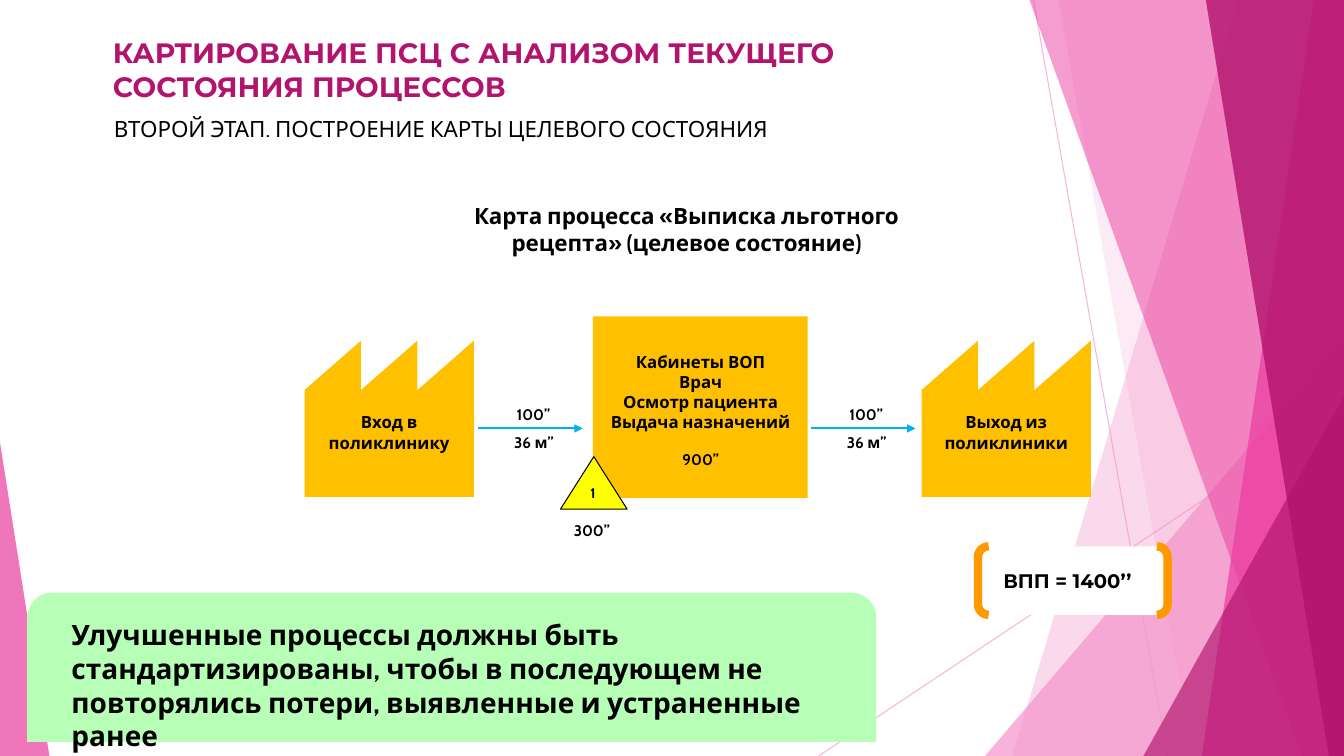
"""Builds the slide with the target state map of the prescription process."""
from dataclasses import dataclass

from lxml import etree
from pptx import Presentation
from pptx.dml.color import RGBColor
from pptx.enum.shapes import MSO_CONNECTOR, MSO_SHAPE
from pptx.enum.text import MSO_ANCHOR, PP_ALIGN
from pptx.oxml.ns import qn
from pptx.shapes.autoshape import Shape
from pptx.shapes.connector import Connector
from pptx.shapes.shapetree import _BaseGroupShapes
from pptx.util import Inches, Pt

STRAIGHT = MSO_CONNECTOR.STRAIGHT
RECTANGLE = MSO_SHAPE.RECTANGLE
TRIANGLE = MSO_SHAPE.ISOSCELES_TRIANGLE
BRACKETS = MSO_SHAPE.DOUBLE_BRACKET
ROUND_TOP = MSO_SHAPE.ROUND_2_SAME_RECTANGLE
LEFT, CENTER = PP_ALIGN.LEFT, PP_ALIGN.CENTER
TOP, MIDDLE = MSO_ANCHOR.TOP, MSO_ANCHOR.MIDDLE

COLORS = {
    "text": "000000", "white": "FFFFFF", "plum": "B2136D", "pink": "EB3D9F",
    "rose": "F496CB", "amber": "FFC000", "blue": "00B0F0", "yellow": "FFFF00",
    "orange": "FF9900", "green": "B7FFB7",
}
WIDTH, HEIGHT = 13.33, 7.5


@dataclass(frozen=True)
class Label:
    """A block of text lines in one format."""
    lines: tuple[str, ...]
    left: float
    top: float
    width: float
    height: float
    size: float = 11
    font: str = "Cabin"
    color: str = "text"
    bold: bool = True
    align: PP_ALIGN = CENTER
    anchor: MSO_ANCHOR = TOP


@dataclass(frozen=True)
class Shard:
    """A translucent band that reaches the right edge of the slide."""
    top_x: float
    bottom_x: float
    color: str
    opacity: int


@dataclass(frozen=True)
class Corner:
    """A translucent triangle standing on the bottom edge of the slide."""
    left: float
    top: float
    width: float
    apex: float
    color: str
    opacity: int


@dataclass(frozen=True)
class Factory:
    """A saw-roofed building at one end of the process."""
    left: float
    name: str


SHARDS_BACK = (Shard(12.28, 10.04, "rose", 36), Shard(10.5, 11.83, "rose", 20))
SHARDS_FRONT = (
    Shard(10.21, 12.91, "pink", 50),
    Shard(13.03, 11.92, "pink", 70),
    Shard(11.96, 13.18, "plum", 80),
)
CORNER_BACK = Corner(9.77, 3.33, 3.56, 1, "rose", 72)
CORNERS_FRONT = (
    Corner(11.34, 3.93, 1.99, 1, "plum", 66),
    Corner(0, 4.39, 0.49, 0, "pink", 70),
)
FACTORIES = (Factory(3.02, "Вход в поликлинику"), Factory(9.14, "Выход из поликлиники"))
ARROW_STARTS = (4.74, 8.04)
HEADINGS = (
    Label(("КАРТИРОВАНИЕ ПСЦ С АНАЛИЗОМ ТЕКУЩЕГО СОСТОЯНИЯ ПРОЦЕССОВ",),
          1.02, 0.41, 8.21, 0.55, 20, "Montserrat", "plum", True, LEFT, MIDDLE),
    Label(("ВТОРОЙ ЭТАП. ПОСТРОЕНИЕ КАРТЫ ЦЕЛЕВОГО СОСТОЯНИЯ",),
          1.03, 1.09, 8.51, 0.37, 16, bold=False, align=LEFT),
    Label(("Карта процесса «Выписка льготного рецепта» (целевое состояние)",),
          4.6, 1.96, 4.42, 0.64, 16),
)
OFFICE = Label(("Кабинеты ВОП", "Врач", "Осмотр пациента", "Выдача назначений", "900’’"),
               5.93, 3.44, 2.04, 1.27, 12)
STOCK = (
    Label(("1",), 5.52, 4.76, 0.72, 0.31, 10),
    Label(("300’’",), 5.45, 5.12, 0.84, 0.29),
)
TOTAL = Label(("ВПП = 1400’’",), 9.7, 5.42, 1.88, 0.68, 14, "Montserrat",
              align=LEFT, anchor=MIDDLE)
CONCLUSION = Label(
    ("Улучшенные процессы должны быть стандартизированы, чтобы в последующем "
     "не повторялись потери, выявленные и устраненные ранее",),
    0.61, 6.08, 8.08, 1.11, 20, align=LEFT)


def rgb(name: str) -> RGBColor:
    return RGBColor.from_string(COLORS[name])


def set_opacity(item: Shape | Connector, percent: int) -> None:
    for color in item.element.spPr.iter(qn("a:srgbClr")):
        etree.SubElement(color, qn("a:alpha"), val=str(percent * 1000))


def paint(shape: Shape, color: str, opacity: int = 100) -> None:
    shape.shadow.inherit = False
    shape.fill.solid()
    shape.fill.fore_color.rgb = rgb(color)
    shape.line.fill.background()
    if opacity < 100:
        set_opacity(shape, opacity)


def outline(item: Shape | Connector, color: str, width: float) -> None:
    item.line.color.rgb = rgb(color)
    item.line.width = Pt(width)


def add_shape(shapes: _BaseGroupShapes, kind: MSO_SHAPE, left: float, top: float,
              width: float, height: float, color: str, opacity: int = 100) -> Shape:
    shape = shapes.add_shape(kind, Inches(left), Inches(top), Inches(width), Inches(height))
    paint(shape, color, opacity)
    return shape


def write(box: Shape, label: Label) -> None:
    frame = box.text_frame
    frame.word_wrap = True
    frame.vertical_anchor = label.anchor
    values = {"size": Pt(label.size), "name": label.font, "bold": label.bold}
    for index, line in enumerate(label.lines):
        para = frame.add_paragraph() if index else frame.paragraphs[0]
        para.alignment = label.align
        span = para.add_run()
        span.text = line
        for key, value in values.items():
            setattr(span.font, key, value)
        span.font.color.rgb = rgb(label.color)


def add_label(shapes: _BaseGroupShapes, label: Label) -> Shape:
    box = shapes.add_textbox(Inches(label.left), Inches(label.top),
                             Inches(label.width), Inches(label.height))
    write(box, label)
    return box


def add_line(shapes: _BaseGroupShapes, start: tuple[float, float],
             end: tuple[float, float], color: str, width: float) -> Connector:
    line = shapes.add_connector(STRAIGHT, *(Inches(value) for value in start + end))
    outline(line, color, width)
    etree.SubElement(line.element.spPr, qn("a:effectLst"))
    return line


def add_shard(shapes: _BaseGroupShapes, shard: Shard) -> None:
    builder = shapes.build_freeform(Inches(shard.top_x), 0, scale=1.0)
    corners = ((WIDTH, 0), (WIDTH, HEIGHT), (shard.bottom_x, HEIGHT))
    builder.add_line_segments([(Inches(x), Inches(y)) for x, y in corners])
    paint(builder.convert_to_shape(), shard.color, shard.opacity)


def add_corner(shapes: _BaseGroupShapes, corner: Corner) -> None:
    shape = add_shape(shapes, TRIANGLE, corner.left, corner.top, corner.width,
                      HEIGHT - corner.top, corner.color, corner.opacity)
    shape.adjustments[0] = corner.apex


def add_backdrop(shapes: _BaseGroupShapes) -> None:
    for start, end in (((10.25, 0), (11.58, HEIGHT)), ((WIDTH, 4.03), (8.12, HEIGHT))):
        set_opacity(add_line(shapes, start, end, "rose", 0.75), 70)
    for shard in SHARDS_BACK:
        add_shard(shapes, shard)
    add_corner(shapes, CORNER_BACK)
    for shard in SHARDS_FRONT:
        add_shard(shapes, shard)
    for corner in CORNERS_FRONT:
        add_corner(shapes, corner)


def add_factory(shapes: _BaseGroupShapes, factory: Factory) -> None:
    for tooth in range(3):
        roof = add_shape(shapes, TRIANGLE, factory.left + 0.56 * tooth, 3.38, 0.56, 0.49, "amber")
        roof.adjustments[0] = 1
    add_shape(shapes, RECTANGLE, factory.left, 3.87, 1.68, 1.06, "amber")
    add_label(shapes, Label((factory.name,), factory.left, 4.04, 1.68, 0.5, 12))


def add_transfer(shapes: _BaseGroupShapes, start: float) -> None:
    arrow = add_line(shapes, (start, 4.25), (start + 1.04, 4.25), "blue", 1.5)
    etree.SubElement(arrow.line._get_or_add_ln(), qn("a:tailEnd"), type="triangle")
    add_label(shapes, Label(("100’’",), start + 0.13, 3.97, 0.84, 0.29))
    add_label(shapes, Label(("36 м’’",), start - 0.03, 4.25, 1.17, 0.29))


def main() -> None:
    deck = Presentation()
    deck.slide_width, deck.slide_height = Inches(WIDTH), Inches(HEIGHT)
    page = deck.slides.add_slide(deck.slide_layouts[6])
    shapes = page.shapes
    add_backdrop(shapes.add_group_shape().shapes)
    for heading in HEADINGS:
        add_label(shapes, heading)
    add_shape(shapes, RECTANGLE, 5.88, 3.14, 2.13, 1.8, "amber")
    duration = add_label(shapes, OFFICE).text_frame.paragraphs[-1]
    duration.space_before = Pt(13)
    duration.runs[0].font.size = Pt(11)
    for factory in FACTORIES:
        add_factory(shapes.add_group_shape().shapes, factory)
    for start in ARROW_STARTS:
        add_transfer(shapes, start)
    outline(add_shape(shapes, TRIANGLE, 5.56, 4.53, 0.66, 0.52, "yellow"), "text", 0.75)
    for label in STOCK:
        add_label(shapes, label)
    total = add_shape(shapes, BRACKETS, TOTAL.left, TOTAL.top, TOTAL.width, TOTAL.height, "white")
    total.adjustments[0] = 0.155
    outline(total, "orange", 6)
    write(total, TOTAL)
    total.text_frame.margin_left = Inches(0.22)
    add_shape(shapes, ROUND_TOP, 0.27, 5.88, 8.42, 1.48, "green")
    add_label(shapes, CONCLUSION)
    deck.save("out.pptx")


if __name__ == "__main__":
    main()
